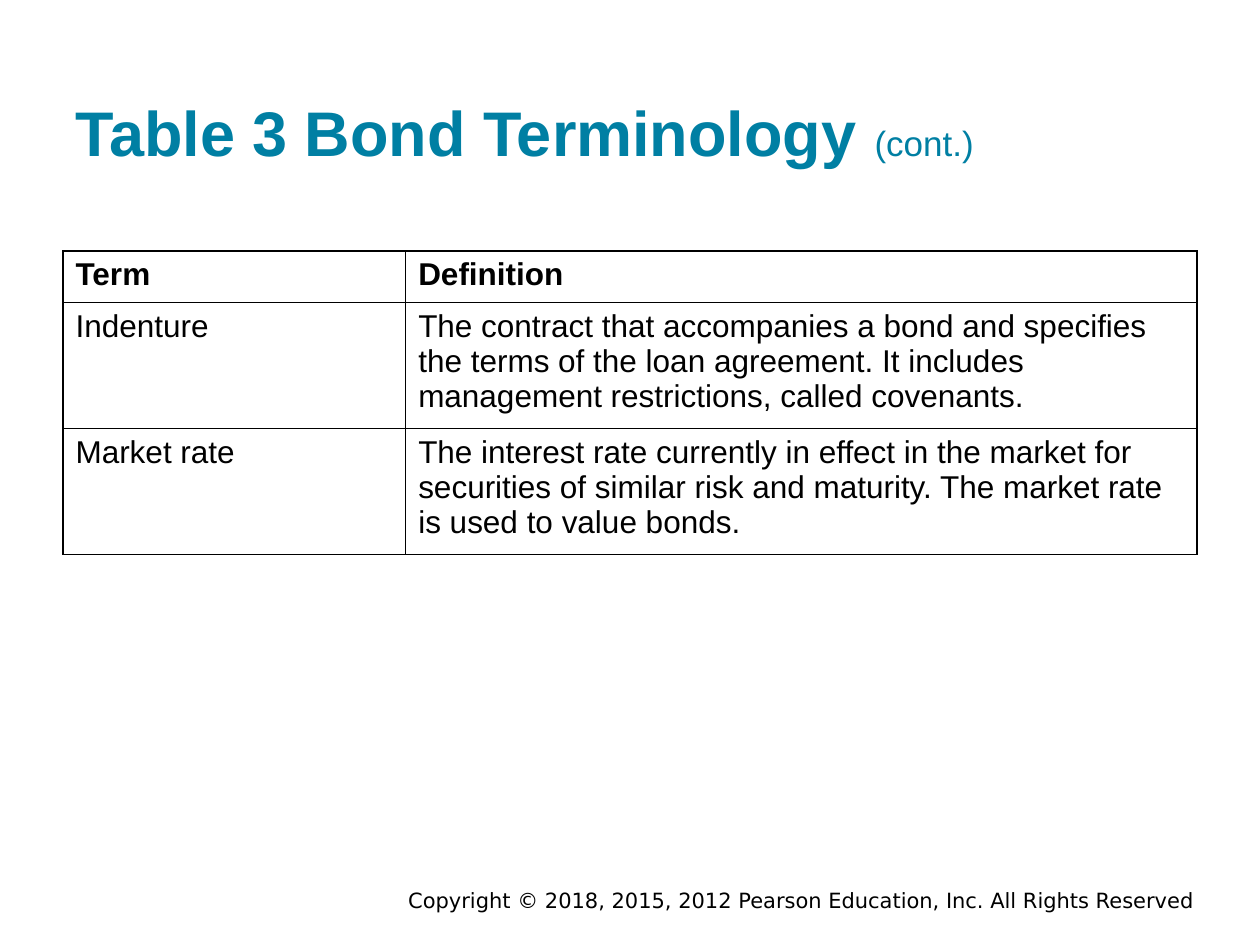
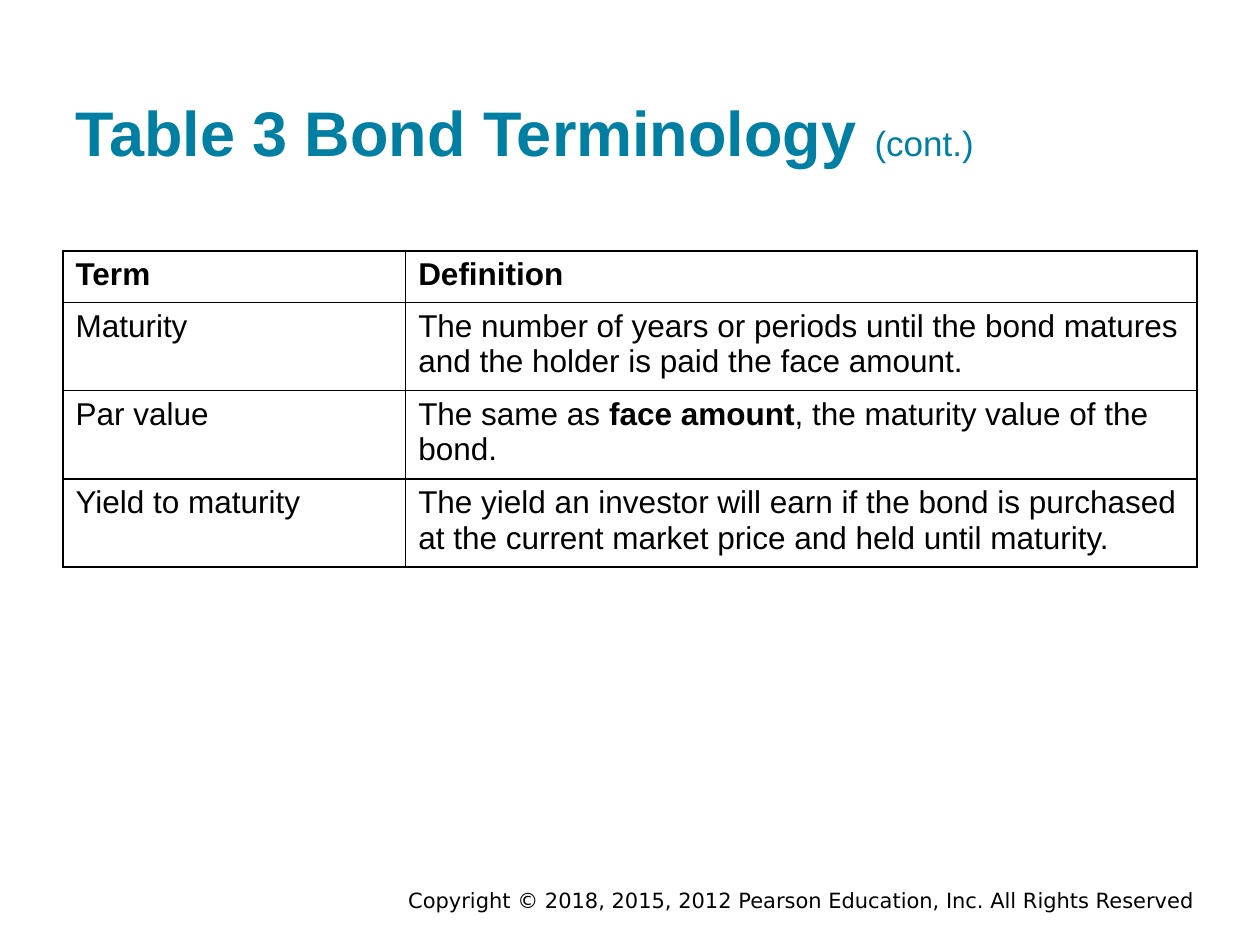
from dataclasses import dataclass

from lxml.etree import SubElement
from pptx import Presentation
from pptx.dml.color import RGBColor
from pptx.enum.text import MSO_ANCHOR, PP_ALIGN
from pptx.oxml.ns import qn
from pptx.slide import Slide
from pptx.table import _Cell
from pptx.text.text import TextFrame
from pptx.util import Inches, Pt

TEAL = RGBColor(0x00, 0x7F, 0xA3)
BLACK = RGBColor(0x00, 0x00, 0x00)
WHITE = RGBColor(0xFF, 0xFF, 0xFF)
BODY_FONT = "Arial"
FOOTER_FONT = "DejaVu Sans"
COLUMN_WIDTHS = (Inches(2.72), Inches(6.28))
ROW_HEIGHT = Inches(0.41)
COPYRIGHT = "Copyright © 2018, 2015, 2012 Pearson Education, Inc. All Rights Reserved"


@dataclass(frozen=True)
class Span:
    text: str
    bold: bool = False
    size: float | None = None


@dataclass(frozen=True)
class Entry:
    term: Span
    definition: tuple[Span, ...]


TITLE = (Span("Table 3 Bond Terminology ", bold=True), Span("(cont.)", size=20))
HEADER = Entry(Span("Term", bold=True), (Span("Definition", bold=True),))

GLOSSARY_PAGES = (
    (
        Entry(Span("Indenture"), (Span(
            "The contract that accompanies a bond and specifies the terms of the loan "
            "agreement. It includes management restrictions, called covenants."),)),
        Entry(Span("Market rate"), (Span(
            "The interest rate currently in effect in the market for securities of similar "
            "risk and maturity. The market rate is used to value bonds."),)),
    ),
    (
        Entry(Span("Maturity"), (Span(
            "The number of years or periods until the bond matures and the holder is paid "
            "the face amount."),)),
        Entry(Span("Par value"), (
            Span("The same as "),
            Span("face amount", bold=True),
            Span(", the maturity value of the bond."))),
        Entry(Span("Yield to maturity"), (Span(
            "The yield an investor will earn if the bond is purchased at the current market "
            "price and held until maturity."),)),
    ),
)


def write_text(frame: TextFrame, spans: tuple[Span, ...], *, size: float = 18,
               font: str = BODY_FONT, color: RGBColor = BLACK,
               align: PP_ALIGN = PP_ALIGN.LEFT) -> None:
    frame.word_wrap = True
    paragraph = frame.paragraphs[0]
    paragraph.alignment = align
    for span in spans:
        run = paragraph.add_run()
        run.text = span.text
        run.font.name = font
        run.font.size = Pt(span.size or size)
        run.font.bold = span.bold
        run.font.color.rgb = color


def add_title(slide: Slide) -> None:
    frame = slide.shapes.add_textbox(
        Inches(0.5), Inches(0.24), Inches(9), Inches(1.2)).text_frame
    frame.vertical_anchor = MSO_ANCHOR.BOTTOM
    frame.margin_top = frame.margin_bottom = Inches(0.1)
    write_text(frame, TITLE, size=36, color=TEAL)


def add_footer(slide: Slide) -> None:
    frame = slide.shapes.add_textbox(
        Inches(1.75), Inches(7.03), Inches(7.83), Inches(0.22)).text_frame
    frame.vertical_anchor = MSO_ANCHOR.MIDDLE
    write_text(frame, (Span(COPYRIGHT),), size=12, font=FOOTER_FONT, align=PP_ALIGN.RIGHT)


def style_cell(cell: _Cell) -> None:
    properties = cell._tc.get_or_add_tcPr()
    for side in ("a:lnL", "a:lnR", "a:lnT", "a:lnB"):
        border = SubElement(properties, qn(side), w=str(Pt(1)))
        fill = SubElement(border, qn("a:solidFill"))
        SubElement(fill, qn("a:srgbClr"), val=str(BLACK))
    cell.fill.solid()
    cell.fill.fore_color.rgb = WHITE


def add_glossary(slide: Slide, entries: tuple[Entry, ...]) -> None:
    rows = (HEADER, *entries)
    table = slide.shapes.add_table(
        len(rows), len(COLUMN_WIDTHS), Inches(0.5), Inches(1.99),
        sum(COLUMN_WIDTHS), ROW_HEIGHT * len(rows)).table
    for column, width in zip(table.columns, COLUMN_WIDTHS):
        column.width = width
    for row, entry in zip(table.rows, rows):
        for cell, spans in zip(row.cells, ((entry.term,), entry.definition)):
            style_cell(cell)
            write_text(cell.text_frame, spans)


def main() -> None:
    presentation = Presentation()
    presentation.slide_width = Inches(10)
    presentation.slide_height = Inches(7.5)
    blank_layout = presentation.slide_layouts[6]
    for entries in GLOSSARY_PAGES:
        slide = presentation.slides.add_slide(blank_layout)
        add_footer(slide)
        add_title(slide)
        add_glossary(slide, entries)
    presentation.save("out.pptx")


if __name__ == "__main__":
    main()
